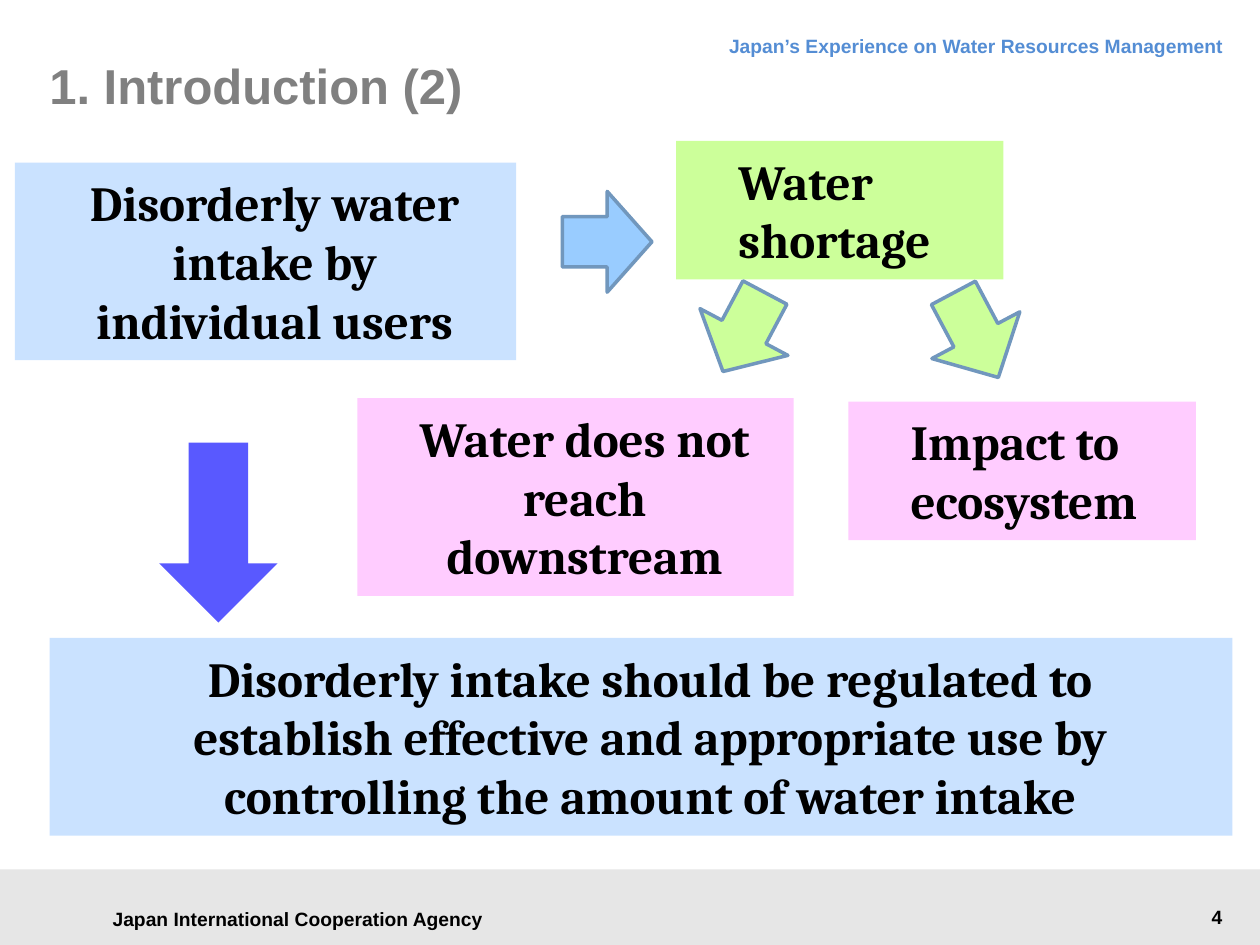
from pptx import Presentation
from pptx.dml.color import RGBColor
from pptx.enum.shapes import MSO_SHAPE
from pptx.enum.text import MSO_ANCHOR, PP_ALIGN
from pptx.util import Pt

TITLE = ("1. Introduction (2)", (28.2, 20.2, 332, 57))
BLUE, PINK, GREEN, EDGE = "CAE2FF", "FFCCFF", "CCFF9A", "7197BD"
LEFT, CENTER, RIGHT = PP_ALIGN.LEFT, PP_ALIGN.CENTER, PP_ALIGN.RIGHT

LABELS = [
    ("Japan International Cooperation Agency", (51, 512.6, 238.5, 24.5),
     dict(align=CENTER, anchor=MSO_ANCHOR.MIDDLE)),
    ("Japan’s Experience on Water Resources Management", (203, 11.5, 503.3, 27.4),
     dict(align=RIGHT, color="548DD4", spacing=18)),
    ("4", (592.6, 514, 113, 20.9), dict(align=RIGHT)),
]
BOXES = [
    ("Disorderly water intake by individual users", (8.5, 92.9, 286.5, 113), BLUE, CENTER),
    ("Water does not reach downstream", (204.2, 227.5, 249.4, 113), PINK, CENTER),
    ("Impact to ecosystem", (484.8, 229.5, 198.5, 79.2), PINK, LEFT),
    ("Water shortage", (386.4, 80.5, 187, 79.2), GREEN, LEFT),
    ("Disorderly intake should be regulated to establish effective and appropriate "
     "use by controlling the amount of water intake",
     (28.4, 364.5, 675.8, 113), BLUE, CENTER),
]
ARROWS = [
    (MSO_SHAPE.RIGHT_ARROW, (321.4, 109.4, 51.2, 57.6), "99CCFF", EDGE, 0),
    (MSO_SHAPE.DOWN_ARROW, (396.7, 164.2, 56.9, 51.1), GREEN, EDGE, 28),
    (MSO_SHAPE.DOWN_ARROW, (90.9, 252.9, 67.8, 102.9), "5959FF", None, 0),
    (MSO_SHAPE.DOWN_ARROW, (529.2, 164.2, 56.9, 54.7), GREEN, EDGE, -28),
]


def rgb(value):
    return RGBColor.from_string(value)


def write(s, text, size=11, font="Arial", color="000000", align=LEFT,
          anchor=MSO_ANCHOR.TOP, margins=(7.2, 3.6, 7.2, 3.6), indent=0, spacing=None):
    tf = s.text_frame
    tf.word_wrap = True
    tf.vertical_anchor = anchor
    tf.margin_left, tf.margin_top, tf.margin_right, tf.margin_bottom = map(Pt, margins)
    p = tf.paragraphs[0]
    p.alignment = align
    if indent:
        pPr = p._p.get_or_add_pPr()
        pPr.set("marL", str(Pt(indent)))
        pPr.set("indent", "0")
    if spacing:
        p.line_spacing = Pt(spacing)
    r = p.add_run()
    r.text = text
    r.font.size, r.font.name, r.font.bold = Pt(size), font, True
    r.font.color.rgb = rgb(color)


def add_shape(slide, kind, place, fill, line=None, rotation=0):
    s = slide.shapes.add_shape(kind, *map(Pt, place))
    s.shadow.inherit = False
    s.fill.solid()
    s.fill.fore_color.rgb = rgb(fill)
    if line:
        s.line.color.rgb = rgb(line)
        s.line.width = Pt(2)
    else:
        s.line.fill.background()
    s.rotation = rotation
    return s


def main():
    prs = Presentation()
    prs.slide_width, prs.slide_height = Pt(720), Pt(540)
    slide = prs.slides.add_slide(prs.slide_layouts[5])

    add_shape(slide, MSO_SHAPE.RECTANGLE, (0, 496.8, 720, 43.2), "E6E6E6")
    for text, place, style in LABELS:
        write(slide.shapes.add_textbox(*map(Pt, place)), text, **style)

    text, place = TITLE
    title = slide.shapes.title
    title.left, title.top, title.width, title.height = map(Pt, place)
    write(title, text, size=28, color="808080", anchor=MSO_ANCHOR.MIDDLE,
          margins=(0, 0, 0, 0))

    for text, place, fill, align in BOXES:
        s = add_shape(slide, MSO_SHAPE.RECTANGLE, place, fill)
        write(s, text, size=28, font="Cambria", align=align,
              margins=(31, 5.8, 25.2, 5.8), indent=4.5)
    for arrow in ARROWS:
        add_shape(slide, *arrow)

    prs.save("out.pptx")


if __name__ == "__main__":
    main()
